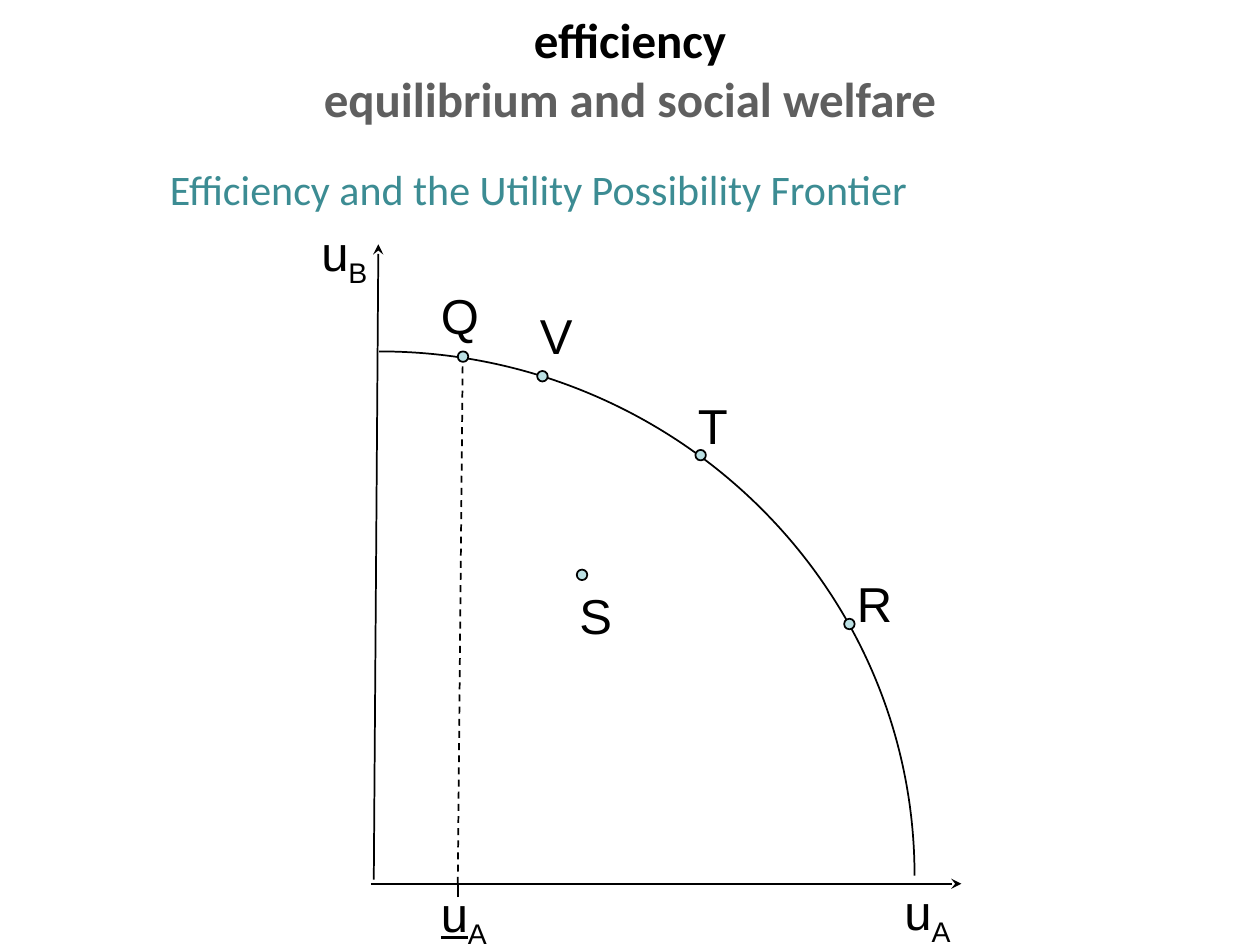
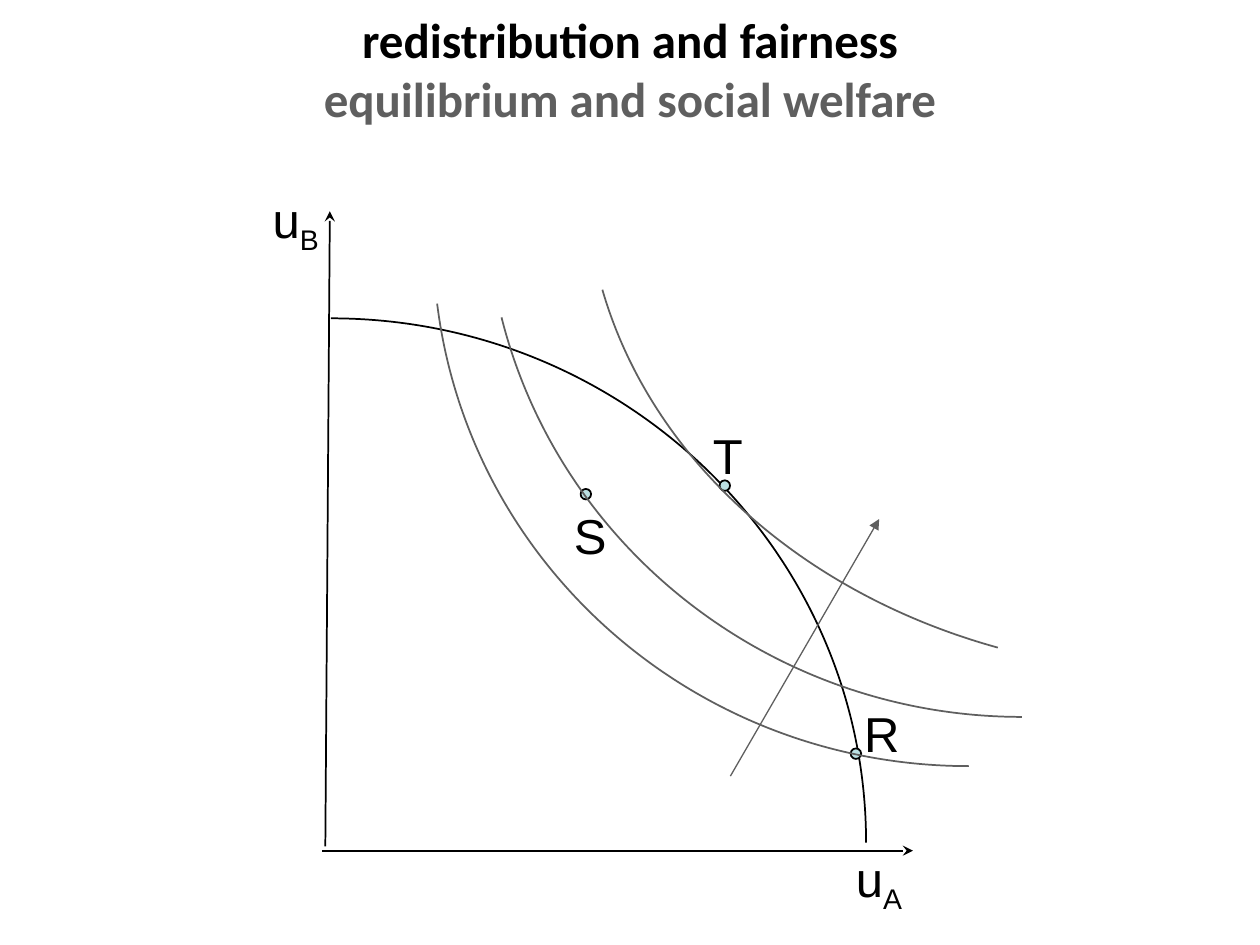
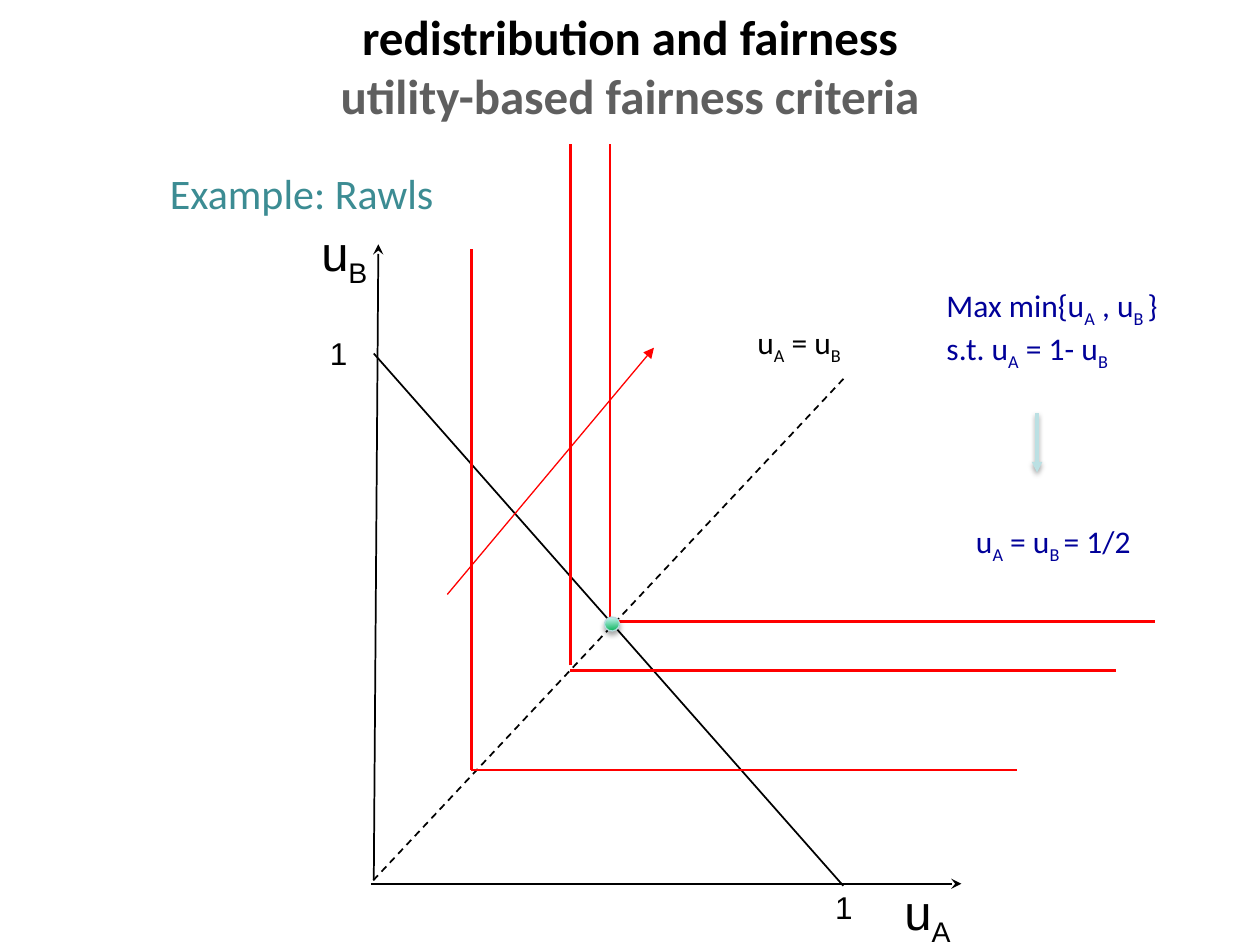
from lxml import etree
from pptx import Presentation
from pptx.dml.color import RGBColor
from pptx.enum import dml, shapes, text
from pptx.oxml.ns import qn
from pptx.util import Pt

BLACK = RGBColor(0x00, 0x00, 0x00)
GREY = RGBColor(0x5F, 0x5F, 0x5F)
TEAL = RGBColor(0x3C, 0x8C, 0x93)
NAVY = RGBColor(0x00, 0x00, 0x99)
RED = RGBColor(0xFF, 0x00, 0x00)
PALE = RGBColor(0xBB, 0xE0, 0xE3)
RIM = RGBColor(0xB6, 0xDC, 0xDF)
GREEN = RGBColor(0x00, 0xB0, 0x50)
ICE = RGBColor(0xD3, 0xFB, 0xFF)

SHIFT = (-27.7, -18.9)  # how far the axes move on the second slide
# four control points of each arc, then the hub of its sector
FRONTIER = [(522.6, 500.4), (522.6, 334.8), (385.2, 200.8), (216.7, 200.8),
            (216.7, 500.4)]
WELFARE = [
    [(249.8, 173.5), (268.6, 324.7), (398.9, 437.8), (553.7, 437.8),
     (553.7, 137.5)],
    [(344.2, 165.6), (372.2, 262.1), (457.9, 339.1), (570.2, 370.1),
     (678.2, 96.5)],
    [(286.6, 181.4), (320.4, 315.4), (443.5, 409.7), (583.9, 409.7),
     (583.9, 109.4)],
]
# corner x, corner y, foot and top of the upright arm
RAWLS = [(326, 383.2, 380.2, 82.1), (269.3, 440, 440, 142.4),
         (348.5, 355, 355, 82.1)]
ARM = 311.8


def effect(item, alpha=None, blur=3.1, dist=1.6):
    """Replace the theme shadow by none, or by a soft black one below."""
    group = etree.SubElement(item._element.spPr, qn("a:effectLst"))
    if alpha:
        cast = etree.SubElement(
            group, qn("a:outerShdw"), blurRad=str(Pt(blur)),
            dist=str(Pt(dist)), dir="5400000", rotWithShape="0")
        tint = etree.SubElement(cast, qn("a:srgbClr"), val="000000")
        etree.SubElement(tint, qn("a:alpha"), val=str(alpha * 1000))


def line(slide, start, end, color=BLACK, width=1, head=None, dash=False,
         shade=None):
    item = slide.shapes.add_connector(
        shapes.MSO_CONNECTOR.STRAIGHT, *map(Pt, (*start, *end)))
    item.line.color.rgb = color
    item.line.width = Pt(width)
    if dash:
        item.line.dash_style = dml.MSO_LINE.DASH
    if head:
        etree.SubElement(item.line._ln, qn("a:tailEnd"), type=head)
    effect(item, shade)


def step(route, kind, *spots):
    """Add one drawing command with its points to a route."""
    node = etree.SubElement(route, qn("a:" + kind))
    for x, y in spots:
        etree.SubElement(node, qn("a:pt"), x=str(x), y=str(y))


def curve(slide, ctrl, color=BLACK):
    """Draw a Bezier arc, with an unstroked sector that reaches its hub."""
    spots = [(Pt(x), Pt(y)) for x, y in ctrl]
    form = slide.shapes.build_freeform(*spots[0])
    form.add_line_segments(spots[3:], close=True)
    item = form.convert_to_shape()
    start, one, two, end, hub = [
        (x - item.left, y - item.top) for x, y in spots]
    routes = item._element.spPr.find(".//" + qn("a:pathLst"))
    routes.clear()
    size = dict(w=str(item.width), h=str(item.height))
    arc = etree.SubElement(routes, qn("a:path"), fill="none", **size)
    wedge = etree.SubElement(routes, qn("a:path"), stroke="0", **size)
    for route in (arc, wedge):
        step(route, "moveTo", start)
        step(route, "cubicBezTo", one, two, end)
    step(wedge, "lnTo", hub)
    step(wedge, "close")
    item.fill.background()
    item.line.color.rgb = color
    item.line.width = Pt(1)
    effect(item)


def dot(slide, x, y):
    item = slide.shapes.add_shape(
        shapes.MSO_SHAPE.FLOWCHART_CONNECTOR, Pt(x - 3), Pt(y - 3), Pt(6), Pt(6))
    item.fill.solid()
    item.fill.fore_color.rgb = PALE
    item.line.color.rgb = BLACK
    item.line.width = Pt(1)
    effect(item)


def ball(slide, x, y):
    item = slide.shapes.add_shape(
        shapes.MSO_SHAPE.OVAL, Pt(x), Pt(y), Pt(8.6), Pt(8))
    item.rotation = 356.3
    item.fill.gradient()
    item.fill.gradient_angle = 90
    for stop, color in zip(item.fill.gradient_stops, (GREEN, ICE)):
        stop.color.rgb = color
    item.line.color.rgb = RIM
    item.line.width = Pt(0.75)
    effect(item, 35, dist=1.8)


def add_run(para, words, size, font, color, bold=False):
    run = para.add_run()
    run.text = words
    run.font.size = Pt(size)
    run.font.name = font
    run.font.bold = bold
    run.font.color.rgb = color
    return run


def label(slide, box, *rows, size=28, font="Arial", color=BLACK, wrap=False,
          under=False, fit=True):
    """Write rows of text; every second piece between bars is a subscript."""
    frame = slide.shapes.add_textbox(*map(Pt, box)).text_frame
    frame.word_wrap = wrap
    if fit:
        frame.auto_size = text.MSO_AUTO_SIZE.SHAPE_TO_FIT_TEXT
    for i, row in enumerate(rows):
        para = frame.add_paragraph() if i else frame.paragraphs[0]
        for j, piece in enumerate(row.split("|")):
            if not piece:
                continue
            run = add_run(para, piece, size, font, color)
            if j % 2:
                run._r.get_or_add_rPr().set("baseline", "-25000")
            elif under:
                run.font.underline = True


def title(slide, top, head, sub):
    frame = slide.shapes.add_textbox(Pt(36), Pt(top), Pt(648), Pt(90)).text_frame
    frame.word_wrap = True
    frame.vertical_anchor = text.MSO_ANCHOR.MIDDLE
    para = frame.paragraphs[0]
    para.alignment = text.PP_ALIGN.CENTER
    add_run(para, head, 28, "Calibri", BLACK, True)
    para.add_line_break()
    add_run(para, sub, 28, "Calibri", GREY, True)


def topic(slide, top, words):
    label(slide, (90, top, 617.8, 41.8), words, size=24, font="Calibri",
          color=TEAL, wrap=True, fit=False)


def axes(slide, dx=0, dy=0):
    for start, end in (((212, 505), (549.4, 505)),
                       ((213.6, 502.6), (216.2, 139.6))):
        line(slide, (start[0] + dx, start[1] + dy),
             (end[0] + dx, end[1] + dy), head="stealth")
    label(slide, (176.5 + dx, 123.5 + dy, 41, 41), "u|B|")
    label(slide, (509.7 + dx, 500 + dy, 43.2, 41), "u|A|")


def frontier(slide, dx=0, dy=0):
    curve(slide, [(x + dx, y + dy) for x, y in FRONTIER])


def points(slide, rows):
    """Each row: name, dot centre, left and top and width of its label."""
    for name, x, y, left, top, width in rows:
        dot(slide, x, y)
        label(slide, (left, top, width, 41), name)


def efficiency(slide):
    axes(slide)
    line(slide, (261.6, 512.6), (261.6, 505))
    line(slide, (261.6, 505), (264.4, 206.6), dash=True)
    frontier(slide)
    label(slide, (244.8, 501.1, 43.2, 41), "u|A|", under=True)
    points(slide, [
        ("Q", 264.6, 203.8, 244.8, 159.8, 35.3),
        ("V", 310, 215, 301.4, 171.1, 34.6),
        ("T", 400.4, 260.1, 391.7, 222.5, 31.7),
        ("R", 485.4, 356.6, 482.5, 324, 32.4),
        ("S", 332.6, 328.5, 324, 331.2, 28.1),
    ])
    title(slide, -5.8, "efficiency", "equilibrium and social welfare")
    topic(slide, 90, "Efficiency and the Utility Possibility Frontier")


def fairness(slide):
    axes(slide, *SHIFT)
    frontier(slide, *SHIFT)
    points(slide, [
        ("T", 414.2, 277.5, 400.3, 239.8, 31.7),
        ("R", 489.1, 430.7, 486.7, 398.2, 32.4),
        ("S", 334.8, 282.4, 320.9, 285.1, 28.1),
    ])
    for ctrl in WELFARE:
        curve(slide, ctrl, GREY)
    line(slide, (417.4, 443.5), (502.4, 296.6), GREY, 0.75, "triangle")
    title(slide, -5.8, "redistribution and fairness",
          "equilibrium and social welfare")


def rawls(slide):
    axes(slide)
    line(slide, (481.9, 506.2), (213.6, 202))
    for left, top in ((470.2, 504), (181.5, 187.2)):
        label(slide, (left, top, 23.8, 28.8), "1", size=18)
    topic(slide, 92.2, "Example: Rawls")
    title(slide, -7.6, "redistribution and fairness",
          "utility-based fairness criteria")
    note = dict(size=18, font="Calibri")
    label(slide, (533.8, 159.8, 139, 51.1), "Max min{u|A| , u|B |}",
          "s.t. u|A| = 1- u|B|", color=NAVY, **note)
    line(slide, (592.6, 236.2), (592.6, 270), PALE, 2, "triangle", shade=38)
    label(slide, (550.6, 295, 138.2, 28.8), "u|A| = u|B |= 1/2",
          color=NAVY, wrap=True, **note)
    line(slide, (482, 216.5), (212, 504.5), dash=True)
    for x, y, foot, top in RAWLS:
        line(slide, (x, foot), (x, top), RED, 1.5)
        line(slide, (x, y), (x + ARM, y), RED, 1.5)
    label(slide, (425.7, 181.1, 67.7, 28.8), "u|A| = u|B|", **note)
    ball(slide, 345.4, 352.6)
    line(slide, (255.6, 339.7), (373.7, 198.7), RED, 0.75, "triangle")


def main():
    deck = Presentation()
    deck.slide_width, deck.slide_height = Pt(720), Pt(540)
    for draw in (efficiency, fairness, rawls):
        draw(deck.slides.add_slide(deck.slide_layouts[6]))
    deck.save("out.pptx")


if __name__ == "__main__":
    main()
